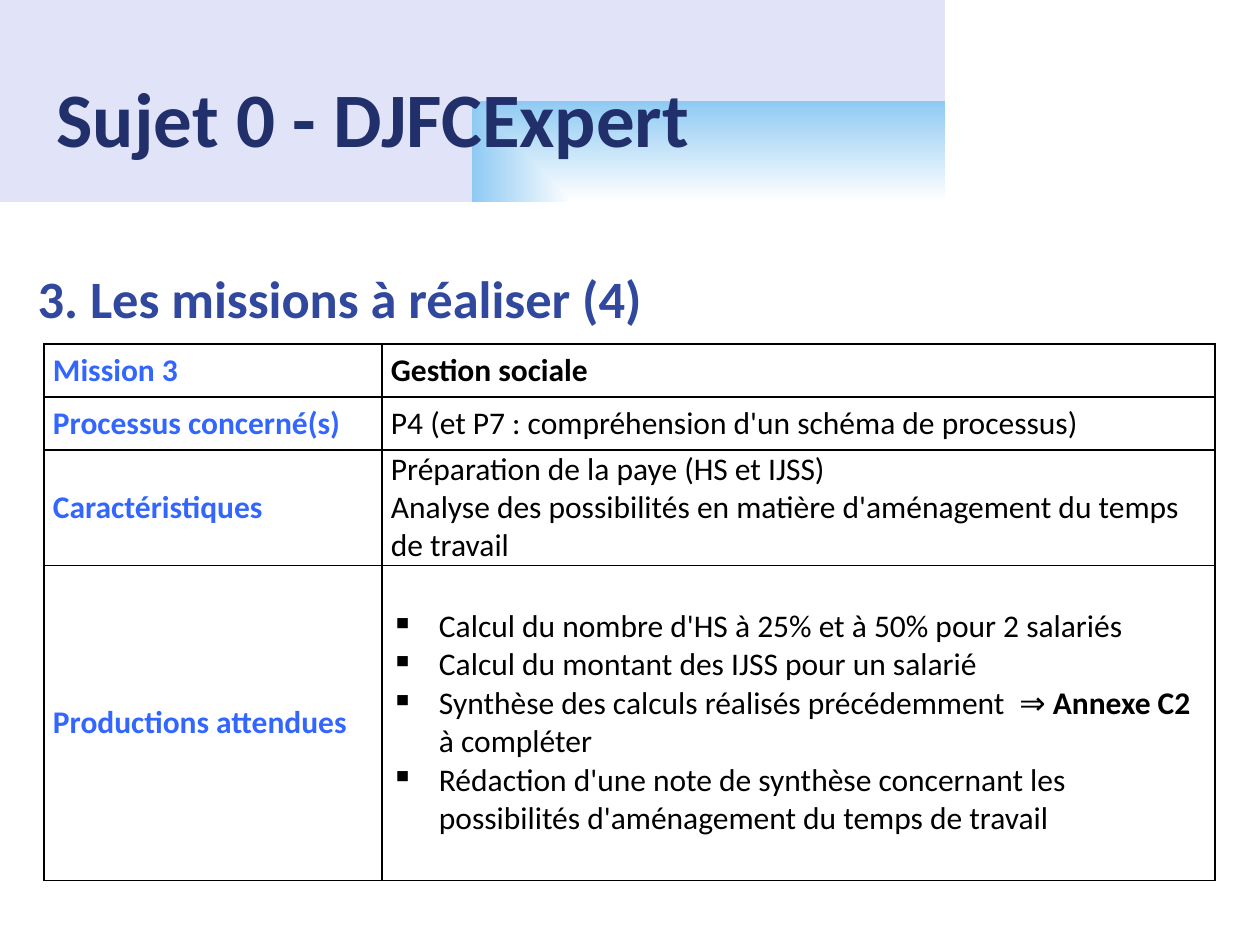
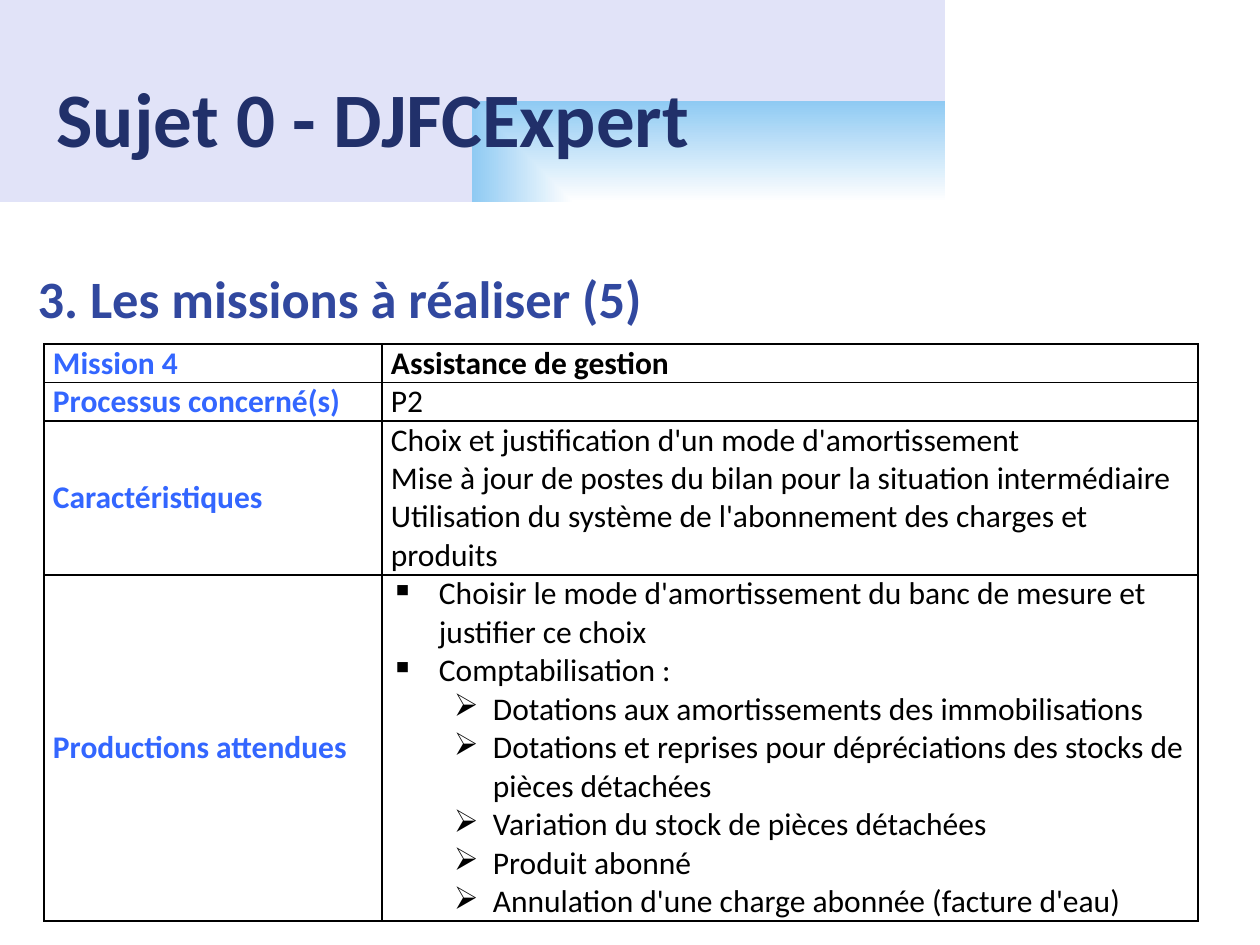
"""Build the two mission slides of the DJFCExpert subject."""
from lxml import etree
from pptx import Presentation
from pptx.dml.color import RGBColor
from pptx.enum.shapes import MSO_SHAPE
from pptx.enum.text import MSO_ANCHOR, MSO_AUTO_SIZE, PP_ALIGN
from pptx.oxml import parse_xml
from pptx.oxml.ns import nsdecls, qn
from pptx.util import Pt

RECTANGLE = MSO_SHAPE.RECTANGLE
MIDDLE, TOP = MSO_ANCHOR.MIDDLE, MSO_ANCHOR.TOP
LEFT = PP_ALIGN.LEFT
NO_AUTOFIT = MSO_AUTO_SIZE.NONE

FONT = "Calibri"
NAVY = RGBColor(0x21, 0x30, 0x6A)
INDIGO = RGBColor(0x31, 0x48, 0x9F)
BLUE = RGBColor(0x33, 0x66, 0xFF)
BLACK = RGBColor(0, 0, 0)
WHITE = RGBColor(0xFF, 0xFF, 0xFF)
SKY = RGBColor(0x8F, 0xCA, 0xF3)
PERIWINKLE = RGBColor(0xC1, 0xC7, 0xF2)
LAVENDER = RGBColor(0xE1, 0xE3, 0xF8)

BAND_STOPS = [(0, WHITE), (100, SKY), (100, PERIWINKLE), (100, LAVENDER)]
BULLETS = {"▪": (0, 48, -48, 40), "➢": (1, 102, -39, 105)}
LABELS = ["Mission", "Processus concerné(s)", "Caractéristiques", "Productions attendues"]

MISSIONS = [
    {
        "part": 4, "number": 3, "widths": [338, 833], "heights": [53, 53, 115, 315],
        "details": [
            [("", "Gestion sociale")],
            [("", "P4 (et P7 : compréhension d'un schéma de processus)")],
            [("", "Préparation de la paye (HS et IJSS)"),
             ("", "Analyse des possibilités en matière d'aménagement du temps de travail")],
            [("▪", "Calcul du nombre d'HS à 25% et à 50% pour 2 salariés"),
             ("▪", "Calcul du montant des IJSS pour un salarié"),
             ("▪", "Synthèse des calculs réalisés précédemment  ⇒ ", "Annexe C2", " à compléter"),
             ("▪", "Rédaction d'une note de synthèse concernant les possibilités "
                   "d'aménagement du temps de travail")],
        ],
    },
    {
        "part": 5, "number": 4, "widths": [338, 816], "heights": [38, 38, 153, 345],
        "details": [
            [("", "Assistance de gestion")],
            [("", "P2")],
            [("", "Choix et justification d'un mode d'amortissement"),
             ("", "Mise à jour de postes du bilan pour la situation intermédiaire"),
             ("", "Utilisation du système de l'abonnement des charges et produits")],
            [("▪", "Choisir le mode d'amortissement du banc de mesure et justifier ce choix"),
             ("▪", "Comptabilisation :"),
             ("➢", "Dotations aux amortissements des immobilisations"),
             ("➢", "Dotations et reprises pour dépréciations des stocks de pièces détachées"),
             ("➢", "Variation du stock de pièces détachées"),
             ("➢", "Produit abonné"),
             ("➢", "Annulation d'une charge abonnée (facture d'eau)")],
        ],
    },
]


def px(length):
    """Convert px to EMU."""
    return round(length * 914400 / 126)


def write(paragraph, text, size=18, color=BLACK, bold=False):
    """Add a formatted run to a paragraph."""
    run = paragraph.add_run()
    run.text = text
    run.font.name = FONT
    run.font.size = Pt(size)
    run.font.bold = bold
    run.font.color.rgb = color


deck = Presentation()
deck.slide_width, deck.slide_height = px(1260), px(945)
layout = deck.slide_layouts[1]

for mission in MISSIONS:
    slide = deck.slides.add_slide(layout)
    title, heading = slide.placeholders

    if mission is MISSIONS[0]:
        band = slide.shapes.add_shape(RECTANGLE, 0, 0, px(945), px(202))
        band.shadow.inherit = False
        band.line.fill.background()
        band.fill.background()
        stops = "".join(
            f'<a:gs pos="{position * 1000}"><a:srgbClr val="{color}"/></a:gs>'
            for position, color in BAND_STOPS)
        gradient = parse_xml(
            f'<a:gradFill {nsdecls("a")} rotWithShape="1"><a:gsLst>{stops}</a:gsLst>'
            '<a:path path="rect"><a:fillToRect l="100000" t="100000"/></a:path></a:gradFill>')
        plain_fill = band.element.spPr.find(qn("a:noFill"))
        band.element.spPr.replace(plain_fill, gradient)
        deck.slide_master.shapes.element.insert(2, band.element)

    for holder, box, anchor, text, size, color in [
        (title, (44, 37, 863, 159), MIDDLE, "Sujet 0 - DJFCExpert", 44, NAVY),
        (heading, (25, 260, 1211, 78), TOP,
         f"3. Les missions à réaliser ({mission['part']})", 30, INDIGO),
    ]:
        holder.left, holder.top, holder.width, holder.height = map(px, box)
        frame = holder.text_frame
        frame.auto_size = NO_AUTOFIT
        frame.word_wrap = True
        frame.vertical_anchor = anchor
        line = frame.paragraphs[0]
        line.alignment = LEFT
        line.space_before = Pt(0)
        properties = line._p.get_or_add_pPr()
        properties.set("marL", "0")
        properties.set("indent", "0")
        etree.SubElement(properties, qn("a:buNone"))
        write(line, text, size=size, color=color, bold=True)

    widths, heights = mission["widths"], mission["heights"]
    grid = slide.shapes.add_table(
        len(heights), len(widths), px(44), px(344), px(sum(widths)), px(sum(heights)))
    table = grid.table
    table.first_row = table.horz_banding = False
    for column, width in zip(table.columns, widths):
        column.width = px(width)
    for row, height in zip(table.rows, heights):
        row.height = px(height)

    for index, (label, details) in enumerate(zip(LABELS, mission["details"])):
        label_cell, detail_cell = table.rows[index].cells
        for cell in (label_cell, detail_cell):
            cell.fill.background()
            cell.vertical_anchor = MIDDLE
            cell.margin_left = cell.margin_right = px(9)
            cell.margin_top = cell.margin_bottom = 0
        name = label if index else f"{label} {mission['number']}"
        write(label_cell.text_frame.paragraphs[0], name, color=BLUE, bold=True)

        frame = detail_cell.text_frame
        for order, (bullet, *parts) in enumerate(details):
            line = frame.add_paragraph() if order else frame.paragraphs[0]
            if bullet:
                level, margin, indent, tab = BULLETS[bullet]
                line.level = level
                properties = line._p.get_or_add_pPr()
                properties.set("marL", str(px(margin)))
                properties.set("indent", str(px(indent)))
                etree.SubElement(properties, qn("a:buChar"), char=bullet)
                tabs = etree.SubElement(properties, qn("a:tabLst"))
                etree.SubElement(tabs, qn("a:tab"), pos=str(px(tab)), algn="l")
            for part_index, part in enumerate(parts):
                write(line, part, bold=index == 0 or part_index == 1)

    for cell_properties in grid.element.iter(qn("a:tcPr")):
        for position, side in enumerate(["lnL", "lnR", "lnT", "lnB"]):
            cell_properties.insert(position, parse_xml(
                f'<a:{side} {nsdecls("a")} w="{Pt(1)}"><a:solidFill>'
                f'<a:srgbClr val="{BLACK}"/></a:solidFill></a:{side}>'))

deck.save("out.pptx")
